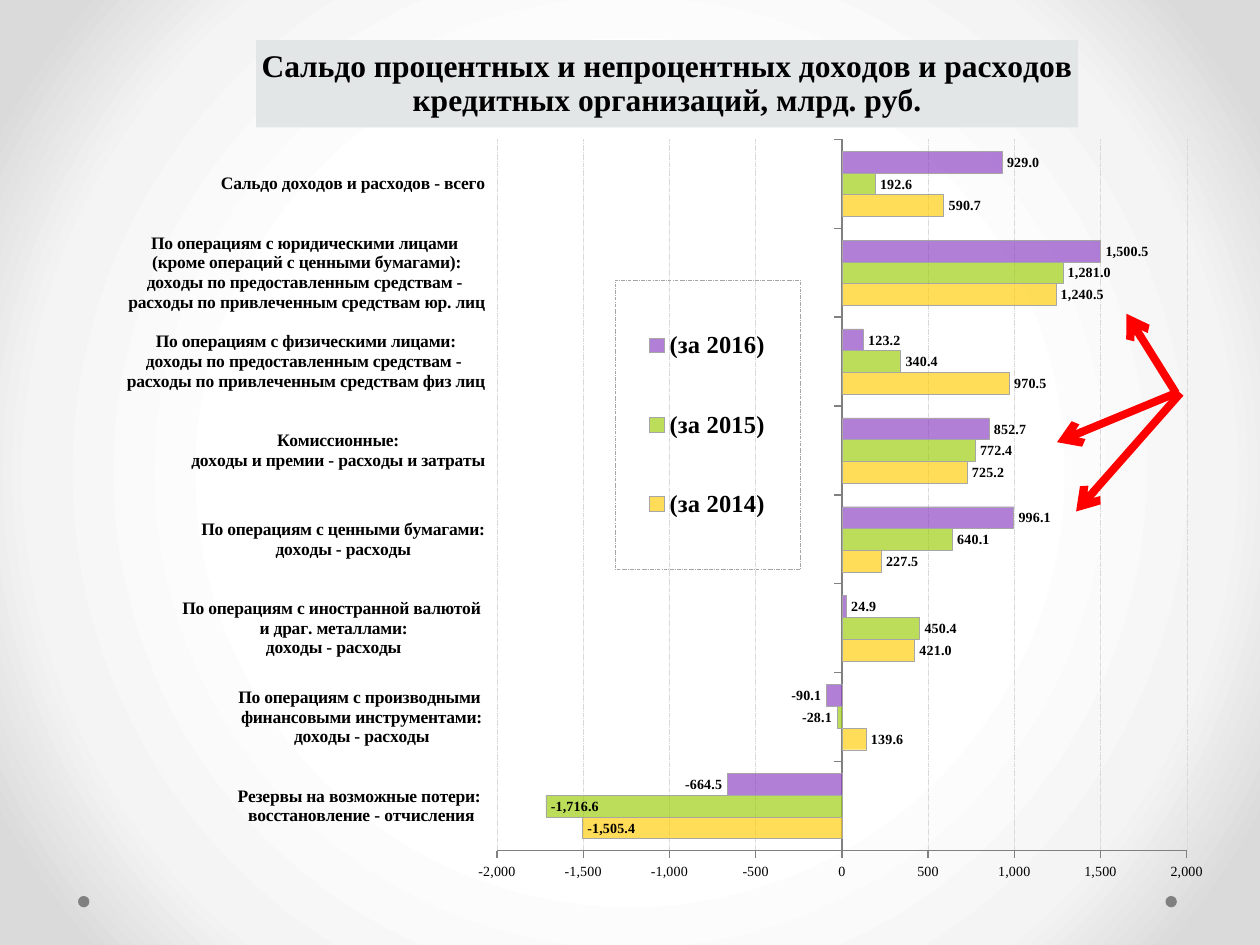
from lxml import etree
from pptx import Presentation
from pptx.chart.data import CategoryChartData
from pptx.dml.color import RGBColor
from pptx.enum import chart as charts, dml, shapes
from pptx.oxml import parse_xml
from pptx.oxml.ns import nsdecls, qn
from pptx.util import Pt

COLORS = {
    "text": "000000", "dot": "808080", "arrow": "FF0000", "title": "E2E6E6",
    "grid": "D9D9D9", "axis": "808080", "outline": "A6A6A6",
    "2014": "FFCC00", "2015": "99CC00", "2016": "893BC3",
}
BACKGROUND_STOPS = [(50, "FFFFFF"), (76, "F4F4F4"), (92, "DADADA")]
FONT = "Times New Roman"
LABEL_FORMAT = "#,##0.0"
TITLE = ("Сальдо процентных и непроцентных доходов и расходов "
         "кредитных организаций, млрд. руб.")
CATEGORIES = [
    "Резервы на возможные потери: \nвосстановление - отчисления",
    "По операциям с производными \nфинансовыми инструментами:\nдоходы - расходы",
    "По операциям с иностранной валютой \nи драг. металлами:\nдоходы - расходы",
    "По операциям с ценными бумагами:\nдоходы - расходы",
    "Комиссионные:\nдоходы и премии - расходы и затраты",
    "По операциям с физическими лицами:\nдоходы по предоставленным средствам - \n"
    "расходы по привлеченным средствам физ лиц",
    "По операциям с юридическими лицами \n(кроме операций с ценными бумагами):\n"
    "доходы по предоставленным средствам - \n"
    "расходы по привлеченным средствам юр. лиц",
    "Сальдо доходов и расходов - всего",
]
BALANCES = {
    "2014": [-1505.4, 139.6, 421.0, 227.5, 725.2, 970.5, 1240.5, 590.7],
    "2015": [-1716.6, -28.1, 450.4, 640.1, 772.4, 340.4, 1281.0, 192.6],
    "2016": [-664.5, -90.1, 24.9, 996.1, 852.7, 123.2, 1500.5, 929.0],
}
INSIDE_LABEL_YEARS = ("2014", "2015")


def rgb(name):
    return RGBColor.from_string(COLORS[name])


def set_layout(element, index, x, y, w=None, h=None, inner=False):
    """Place a chart part by fractions of the chart's size."""
    for old in element.findall(qn("c:layout")):
        element.remove(old)
    values = [("xMode", "edge"), ("yMode", "edge"), ("x", x), ("y", y)]
    if inner:
        values.insert(0, ("layoutTarget", "inner"))
    if w is not None:
        values += [("w", w), ("h", h)]
    parts = "".join(f'<c:{tag} val="{value}"/>' for tag, value in values)
    element.insert(index, parse_xml(
        f'<c:layout {nsdecls("c")}><c:manualLayout>{parts}</c:manualLayout></c:layout>'))


class SlideBuilder:
    def __init__(self, slide):
        self.slide = slide

    def style_font(self, font, size, bold=False):
        font.name, font.size, font.bold = FONT, Pt(size), bold
        font.color.rgb = rgb("text")

    def style_line(self, line, color, width, dash=None):
        line.color.rgb = rgb(color)
        line.width = Pt(width)
        if dash:
            line.dash_style = dash

    def background(self):
        stops = "".join(
            f'<a:gs pos="{position * 1000}"><a:srgbClr val="{color}"/></a:gs>'
            for position, color in BACKGROUND_STOPS)
        self.slide.element.cSld.insert(0, parse_xml(
            f'<p:bg {nsdecls("p", "a")}><p:bgPr><a:gradFill rotWithShape="1">'
            f'<a:gsLst>{stops}</a:gsLst><a:path path="circle">'
            '<a:fillToRect l="50000" t="50000" r="50000" b="50000"/></a:path>'
            '</a:gradFill><a:effectLst/></p:bgPr></p:bg>'))

    def dot(self, left, top, size=6.5):
        shape = self.slide.shapes.add_shape(
            shapes.MSO_SHAPE.OVAL, Pt(left), Pt(top), Pt(size), Pt(size))
        shape.shadow.inherit = False
        shape.fill.solid()
        shape.fill.fore_color.rgb = rgb("dot")
        shape.line.fill.background()

    def arrow(self, start, end):
        connector = self.slide.shapes.add_connector(
            shapes.MSO_CONNECTOR.STRAIGHT, *(Pt(value) for value in start + end))
        self.style_line(connector.line, "arrow", 4.5)
        etree.SubElement(connector.line._get_or_add_ln(), qn("a:tailEnd"), type="arrow")
        etree.SubElement(connector.element.spPr, qn("a:effectLst"))

    def bar_chart(self, left, top, width, height):
        data = CategoryChartData(number_format=LABEL_FORMAT)
        data.categories = CATEGORIES
        for year, values in BALANCES.items():
            data.add_series(f"(за {year})", values)
        chart = self.slide.shapes.add_chart(
            charts.XL_CHART_TYPE.BAR_CLUSTERED,
            Pt(left), Pt(top), Pt(width), Pt(height), data).chart
        self.style_font(chart.font, 8)
        chart.plots[0].gap_width = 109
        chart.plots[0].vary_by_categories = False
        for year, series in zip(BALANCES, chart.plots[0].series):
            self.bar_series(series, year)
        self.chart_title(chart)
        self.chart_axes(chart)
        self.chart_legend(chart)
        set_layout(chart._chartSpace.chart.plotArea, 0, 0.35, 0.14, 0.615, 0.81, inner=True)

    def bar_series(self, series, year):
        series.invert_if_negative = False
        series.format.fill.solid()
        series.format.fill.fore_color.rgb = rgb(year)
        fill_color = series._element.spPr.find(f'{qn("a:solidFill")}/{qn("a:srgbClr")}')
        etree.SubElement(fill_color, qn("a:alpha"), val="65000")
        self.style_line(series.format.line, "outline", 0.25)
        labels = series.data_labels
        labels.show_value = True
        labels.number_format, labels.number_format_is_linked = LABEL_FORMAT, False
        labels.position = charts.XL_LABEL_POSITION.OUTSIDE_END
        self.style_font(labels.font, 8, bold=True)
        if year in INSIDE_LABEL_YEARS:
            label = series.points[0].data_label
            self.style_font(label.font, 8, bold=True)
            label.position = charts.XL_LABEL_POSITION.INSIDE_END
            label_element = series._element.find(f'.//{qn("c:dLbl")}')
            label_element.insert(1, parse_xml(
                f'<c:numFmt {nsdecls("c")} formatCode="{LABEL_FORMAT}" sourceLinked="0"/>'))

    def chart_title(self, chart):
        chart.has_title = True
        title = chart.chart_title
        title.text_frame.text = TITLE
        self.style_font(title.text_frame.paragraphs[0].font, 18, bold=True)
        title.format.fill.solid()
        title.format.fill.fore_color.rgb = rgb("title")
        set_layout(title._element, 1, 0.135, 0.027)

    def chart_axes(self, chart):
        categories, values = chart.category_axis, chart.value_axis
        for axis, size, bold in ((categories, 10, True), (values, 8, False)):
            axis.major_tick_mark = charts.XL_TICK_MARK.OUTSIDE
            axis.minor_tick_mark = charts.XL_TICK_MARK.NONE
            axis.tick_label_position = charts.XL_TICK_LABEL_POSITION.LOW
            self.style_font(axis.tick_labels.font, size, bold)
            self.style_line(axis.format.line, "axis", 0.75)
        values.minimum_scale, values.maximum_scale, values.major_unit = -2000, 2000, 500
        values.tick_labels.number_format = "#,##0"
        values.tick_labels.number_format_is_linked = False
        self.style_line(values.major_gridlines.format.line, "grid", 0.25,
                        dml.MSO_LINE.SQUARE_DOT)

    def chart_legend(self, chart):
        chart.has_legend = True
        legend = chart.legend
        legend.position = charts.XL_LEGEND_POSITION.RIGHT
        legend.include_in_layout = True
        self.style_font(legend.font, 14, bold=True)
        set_layout(legend._element, 1, 0.455, 0.3, 0.165, 0.33)
        legend._element.find(qn("c:overlay")).addnext(parse_xml(
            f'<c:spPr {nsdecls("c", "a")}><a:noFill/><a:ln w="{Pt(0.25)}"><a:solidFill>'
            f'<a:srgbClr val="{COLORS["outline"]}"/></a:solidFill>'
            '<a:prstDash val="lgDashDot"/></a:ln></c:spPr>'))


def main():
    presentation = Presentation()
    presentation.slide_width, presentation.slide_height = Pt(720), Pt(540)
    builder = SlideBuilder(presentation.slides.add_slide(presentation.slide_layouts[6]))
    builder.background()
    for left in (44.6, 666):
        builder.dot(left, 512)
    builder.bar_chart(59.8, 9.4, 640.8, 501.8)
    for start, end in (((672, 224.6), (643.7, 179.3)),
                       ((672, 224.6), (604, 252.7)),
                       ((674.6, 224.6), (614.9, 292.3))):
        builder.arrow(start, end)
    presentation.save("out.pptx")


if __name__ == "__main__":
    main()
